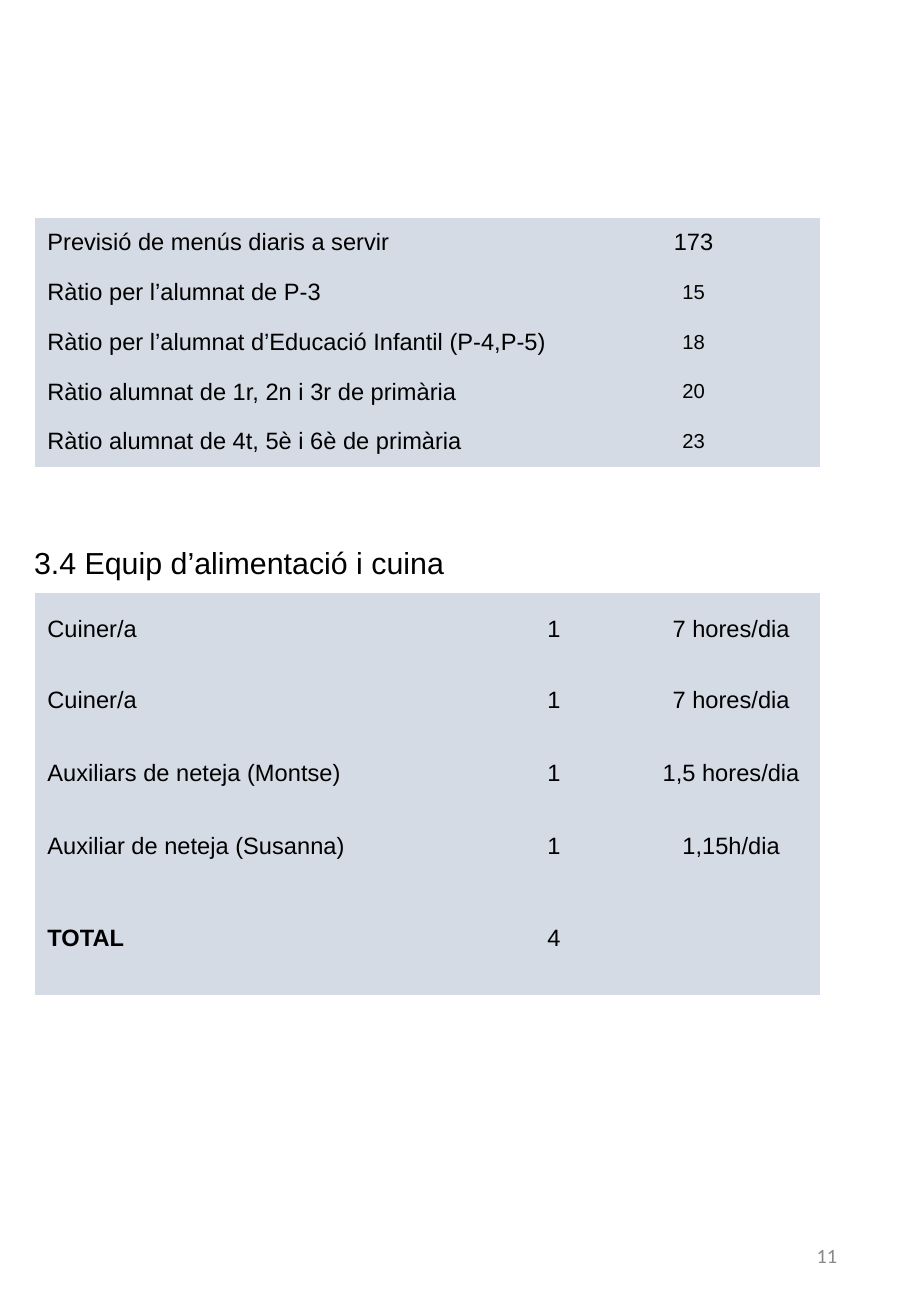
from dataclasses import dataclass

from pptx import Presentation
from pptx.dml.color import RGBColor
from pptx.enum.text import MSO_ANCHOR, MSO_AUTO_SIZE, PP_ALIGN
from pptx.util import Inches, Pt

LEFT, CENTER, RIGHT = PP_ALIGN.LEFT, PP_ALIGN.CENTER, PP_ALIGN.RIGHT
TOP, MIDDLE = MSO_ANCHOR.TOP, MSO_ANCHOR.MIDDLE
NO_FIT = MSO_AUTO_SIZE.NONE

BLACK, GREY, PALE = "000000", "888888", "D5DBE5"
NO_GRID = "{2D5ABB26-0587-4C30-8999-92F81FD0307C}"
EDGE = 0.29  # left edge of both tables


@dataclass(frozen=True)
class Cell:
    text: str
    size: int = 14
    bold: bool = False


@dataclass(frozen=True)
class Grid:
    top: float
    cols: list[float]
    rows: list[float]
    cells: list[list[Cell]]


MENUS = Grid(1.79, [4.38, 2.08], [0.41] * 5, [
    [Cell("Previsió de menús diaris a servir"), Cell("173")],
    [Cell("Ràtio per l’alumnat de P-3"), Cell("15", 12)],
    [Cell("Ràtio per l’alumnat d’Educació Infantil (P-4,P-5)"), Cell("18", 12)],
    [Cell("Ràtio alumnat de 1r, 2n i 3r de primària"), Cell("20", 12)],
    [Cell("Ràtio alumnat de 4t, 5è i 6è de primària"), Cell("23", 12)],
])
STAFF = Grid(4.88, [3.54, 1.46, 1.46], [0.59, 0.59, 0.61, 0.59, 0.93], [
    [Cell("Cuiner/a"), Cell("1"), Cell("7 hores/dia")],
    [Cell("Cuiner/a"), Cell("1"), Cell("7 hores/dia")],
    [Cell("Auxiliars de neteja (Montse)"), Cell("1"), Cell("1,5 hores/dia")],
    [Cell("Auxiliar de neteja (Susanna)"), Cell("1"), Cell("1,15h/dia")],
    [Cell("TOTAL", bold=True), Cell("4"), Cell("")],
])


def rgb(code: str) -> RGBColor:
    return RGBColor.from_string(code)


def write(frame, text: str, *, size: int = 14, font: str = "Arial",
          color: str = BLACK, bold: bool = False, align=LEFT) -> None:
    para = frame.paragraphs[0]
    para.alignment = align
    if not text:
        return
    run = para.add_run()
    run.text = text
    run.font.size, run.font.name, run.font.bold = Pt(size), font, bold
    run.font.color.rgb = rgb(color)


def draw_grid(slide, grid: Grid) -> None:
    frame = slide.shapes.add_table(
        len(grid.rows), len(grid.cols), Inches(EDGE), Inches(grid.top),
        Inches(sum(grid.cols)), Inches(sum(grid.rows)))
    table = frame.table
    table.first_row = table.horz_banding = False
    table._tbl.tblPr[0].text = NO_GRID
    for col, width in zip(table.columns, grid.cols):
        col.width = Inches(width)
    for row, height, items in zip(table.rows, grid.rows, grid.cells):
        row.height = Inches(height)
        for i, (cell, item) in enumerate(zip(row.cells, items)):
            cell.fill.solid()
            cell.fill.fore_color.rgb = rgb(PALE)
            cell.vertical_anchor = MIDDLE
            write(cell.text_frame, item.text, size=item.size,
                  bold=item.bold, align=CENTER if i else LEFT)


def main() -> None:
    deck = Presentation()
    deck.slide_width, deck.slide_height = Inches(7.5), Inches(10.83)
    slide = deck.slides.add_slide(deck.slide_layouts[5])

    # Section title
    title = slide.shapes.title
    title.left, title.top = Inches(0.18), Inches(3.83)
    title.width, title.height = Inches(4.24), Inches(1.27)
    frame = title.text_frame
    frame.auto_size, frame.word_wrap = NO_FIT, True
    frame.vertical_anchor, frame.margin_top = TOP, Inches(0.65)
    write(frame, "3.4 Equip d’alimentació i cuina", size=18)

    # Tables
    for grid in (MENUS, STAFF):
        draw_grid(slide, grid)

    # Page number
    page = slide.shapes.add_textbox(
        Inches(5.3), Inches(10.04), Inches(1.69), Inches(0.58)).text_frame
    page.word_wrap, page.vertical_anchor = True, MIDDLE
    write(page, "11", size=12, font="Calibri", color=GREY, align=RIGHT)

    deck.save("out.pptx")


if __name__ == "__main__":
    main()
